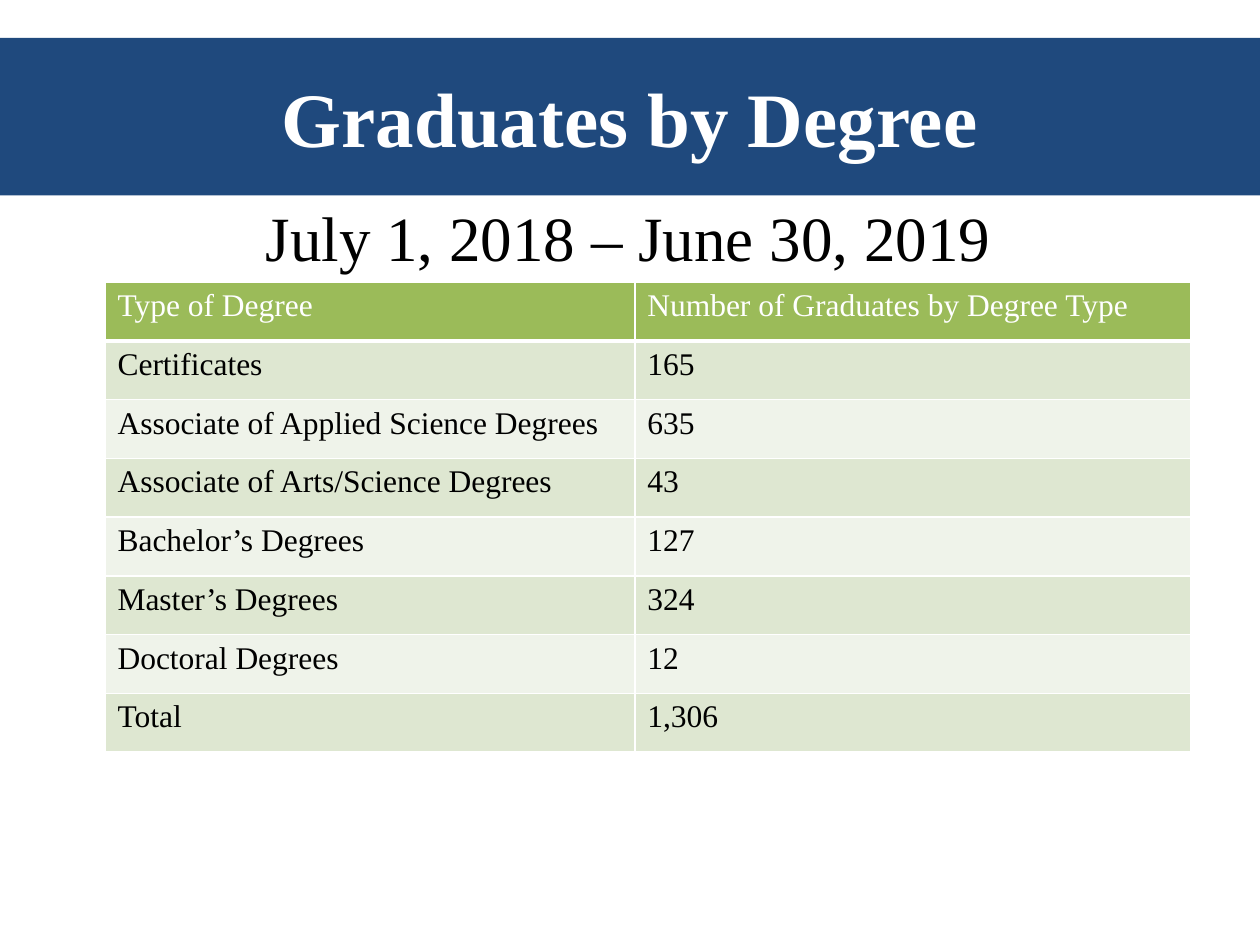
import dataclasses

import pptx
import pptx.dml.color
import pptx.enum.text
import pptx.oxml
import pptx.oxml.ns
import pptx.util


@dataclasses.dataclass(frozen=True)
class Theme:
    font: str = "Times New Roman"
    banner: str = "1F497D"
    header: str = "9BBB59"
    bands: tuple = ("DEE7D1", "EFF3EA")
    light: str = "FFFFFF"
    dark: str = "000000"
    title_size: int = 44
    period_size: int = 36
    table_size: int = 18
    rule: int = 1
    header_rule: int = 3


DEGREES = [
    ("Type of Degree", "Number of Graduates by Degree Type"),
    ("Certificates", "165"),
    ("Associate of Applied Science Degrees", "635"),
    ("Associate of Arts/Science Degrees", "43"),
    ("Bachelor’s Degrees", "127"),
    ("Master’s Degrees", "324"),
    ("Doctoral Degrees", "12"),
    ("Total", "1,306"),
]


class SlideBuilder:
    """Places styled elements; lengths are percentages of the slide's size."""

    def __init__(self, deck, theme):
        self.deck, self.theme = deck, theme
        self.slide = deck.slides.add_slide(deck.slide_layouts[5])

    def across(self, percent):
        return round(self.deck.slide_width * percent / 100)

    def down(self, percent):
        return round(self.deck.slide_height * percent / 100)

    def box(self, left, top, width, height):
        return self.across(left), self.down(top), self.across(width), self.down(height)

    def paint(self, fill, color):
        fill.solid()
        fill.fore_color.rgb = pptx.dml.color.RGBColor.from_string(color)

    def set_text(self, frame, text, size, color, bold=False, align=None):
        frame.text = text
        paragraph = frame.paragraphs[0]
        paragraph.alignment = align
        font = paragraph.runs[0].font
        font.name, font.size, font.bold = self.theme.font, pptx.util.Pt(size), bold
        font.color.rgb = pptx.dml.color.RGBColor.from_string(color)

    def title(self, text, *area):
        banner = self.slide.shapes.title
        banner.left, banner.top, banner.width, banner.height = self.box(*area)
        self.paint(banner.fill, self.theme.banner)
        banner.text_frame.vertical_anchor = pptx.enum.text.MSO_ANCHOR.MIDDLE
        self.set_text(banner.text_frame, text, self.theme.title_size, self.theme.light,
                      bold=True, align=pptx.enum.text.PP_ALIGN.CENTER)

    def text(self, text, *area):
        frame = self.slide.shapes.add_textbox(*self.box(*area)).text_frame
        frame.word_wrap = False
        frame.auto_size = pptx.enum.text.MSO_AUTO_SIZE.SHAPE_TO_FIT_TEXT
        self.set_text(frame, text, self.theme.period_size, self.theme.dark)

    def borders(self, cell, bottom):
        properties = cell._tc.get_or_add_tcPr()
        rule = self.theme.rule
        for side, points in (("L", rule), ("R", rule), ("T", rule), ("B", bottom)):
            properties.append(pptx.oxml.parse_xml(
                f'<a:ln{side} {pptx.oxml.ns.nsdecls("a")} w="{pptx.util.Pt(points)}">'
                f'<a:solidFill><a:srgbClr val="{self.theme.light}"/></a:solidFill>'
                f'</a:ln{side}>'))

    def table(self, rows, left, top, column_widths, row_height):
        theme = self.theme
        area = self.box(left, top, sum(column_widths), row_height * len(rows))
        grid = self.slide.shapes.add_table(len(rows), len(column_widths), *area).table
        for column, width in zip(grid.columns, column_widths):
            column.width = self.across(width)
        for index, (row, values) in enumerate(zip(grid.rows, rows)):
            row.height = self.down(row_height)
            is_header = index == 0
            fill = theme.header if is_header else theme.bands[(index - 1) % 2]
            color = theme.light if is_header else theme.dark
            for cell, value in zip(row.cells, values):
                self.borders(cell, theme.header_rule if is_header else theme.rule)
                self.paint(cell.fill, fill)
                self.set_text(cell.text_frame, value, theme.table_size, color)


def main():
    deck = pptx.Presentation()
    deck.slide_width, deck.slide_height = pptx.util.Inches(10), pptx.util.Inches(7.5)
    graduates = SlideBuilder(deck, Theme())

    # Title banner across the full width
    graduates.title("Graduates by Degree", 0, 4, 100, 16.67)

    # Graduates per degree type
    graduates.table(DEGREES, left=8.33, top=29.87,
                    column_widths=(42.05, 44.15), row_height=6.22)

    # Reporting period
    graduates.text("July 1, 2018 – June 30, 2019", 20.1, 20.4, 60.1, 9.43)

    deck.save("out.pptx")


if __name__ == "__main__":
    main()
